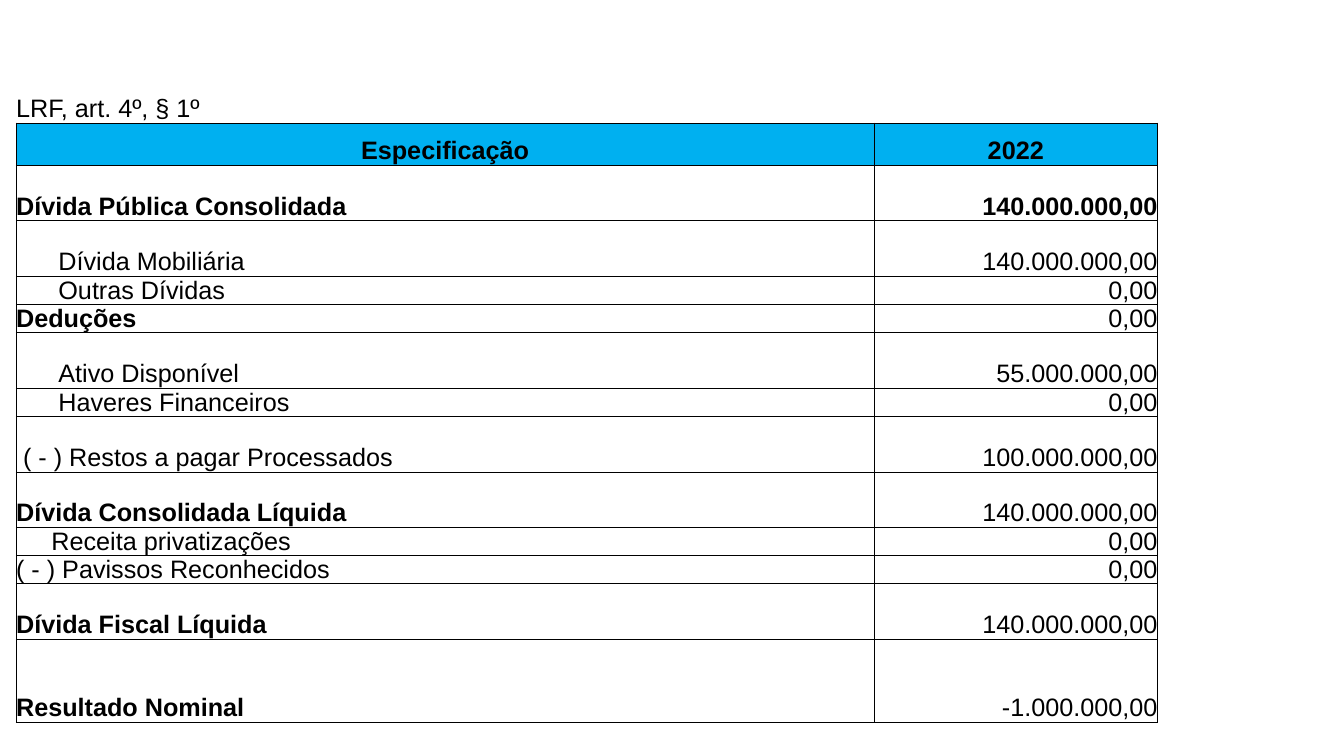
from lxml.etree import SubElement
from pptx import Presentation
from pptx.dml.color import RGBColor
from pptx.enum.text import MSO_ANCHOR, PP_ALIGN
from pptx.oxml.ns import qn
from pptx.util import Pt

PX = 9144  # EMU: 100 px to the inch
BLACK = "000000"
HEADER_BLUE = "00B0F0"
COLUMN_WIDTHS = (851, 281)
CAPTION_HEIGHT, HEADER_HEIGHT = 28, 42

# label, value, row height, label indent, label bold, value bold
DEBT_ROWS = [
    ("Dívida Pública Consolidada", "140.000.000,00", 55, 0, True, True),
    ("Dívida Mobiliária", "140.000.000,00", 55, 42, False, False),
    ("Outras Dívidas", "0,00", 28, 42, False, False),
    ("Deduções", "0,00", 28, 0, True, False),
    ("Ativo Disponível", "55.000.000,00", 55, 42, False, False),
    ("Haveres Financeiros", "0,00", 28, 42, False, False),
    ("( - ) Restos a pagar Processados", "100.000.000,00", 55, 7, False, False),
    ("Dívida Consolidada Líquida", "140.000.000,00", 55, 0, True, False),
    ("Receita privatizações", "0,00", 28, 35, False, False),
    ("( - ) Pavissos Reconhecidos", "0,00", 28, 0, False, False),
    ("Dívida Fiscal Líquida", "140.000.000,00", 55, 0, True, False),
    ("Resultado Nominal", "-1.000.000,00", 82, 0, True, False),
]


def px(n):
    return n * PX


def color(hex_code):
    return RGBColor.from_string(hex_code)


def set_borders(cell, sides):
    """Draw thin black lines on the given sides, a subset of "LRTB"."""
    tc_pr = cell._tc.get_or_add_tcPr()
    for i, side in enumerate(sides):
        ln = SubElement(tc_pr, qn(f"a:ln{side}"), w=str(Pt(0.5)))
        fill = SubElement(ln, qn("a:solidFill"))
        SubElement(fill, qn("a:srgbClr"), val=BLACK)
        tc_pr.insert(i, ln)  # lines come before the cell fill


def write_cell(cell, text, align=PP_ALIGN.LEFT, bold=False, indent=0,
               fill=None, sides="LRTB"):
    cell.text_frame.text = text
    cell.vertical_anchor = MSO_ANCHOR.BOTTOM
    cell.margin_left = px(indent)
    cell.margin_right = cell.margin_top = cell.margin_bottom = 0
    if fill:
        cell.fill.solid()
        cell.fill.fore_color.rgb = color(fill)
    else:
        cell.fill.background()
    p = cell.text_frame.paragraphs[0]
    p.alignment = align
    for font in [p.font] + [r.font for r in p.runs]:
        font.name = "Arial"
        font.size = Pt(18)
        font.bold = bold
        font.color.rgb = color(BLACK)
    set_borders(cell, sides)


def add_debt_table(s):
    heights = [CAPTION_HEIGHT, HEADER_HEIGHT] + [row[2] for row in DEBT_ROWS]
    frame = s.shapes.add_table(len(heights), len(COLUMN_WIDTHS), px(16), px(94),
                               px(sum(COLUMN_WIDTHS)), px(sum(heights)))
    table = frame.table
    table.first_row = table.horz_banding = False
    for column, width in zip(table.columns, COLUMN_WIDTHS):
        column.width = px(width)
    for row, height in zip(table.rows, heights):
        row.height = px(height)

    for c, text in enumerate(("LRF, art. 4º, § 1º", "")):
        write_cell(table.cell(0, c), text, sides="B")
    for c, text in enumerate(("Especificação", "2022")):
        write_cell(table.cell(1, c), text, PP_ALIGN.CENTER, True, fill=HEADER_BLUE)
    for i, (label, value, _, indent, label_bold, value_bold) in enumerate(DEBT_ROWS, 2):
        write_cell(table.cell(i, 0), label, bold=label_bold, indent=indent)
        write_cell(table.cell(i, 1), value, PP_ALIGN.RIGHT, value_bold)


def main():
    prs = Presentation()
    prs.slide_width, prs.slide_height = px(1333), px(750)
    s = prs.slides.add_slide(prs.slide_layouts[6])
    add_debt_table(s)
    prs.save("out.pptx")


if __name__ == "__main__":
    main()
